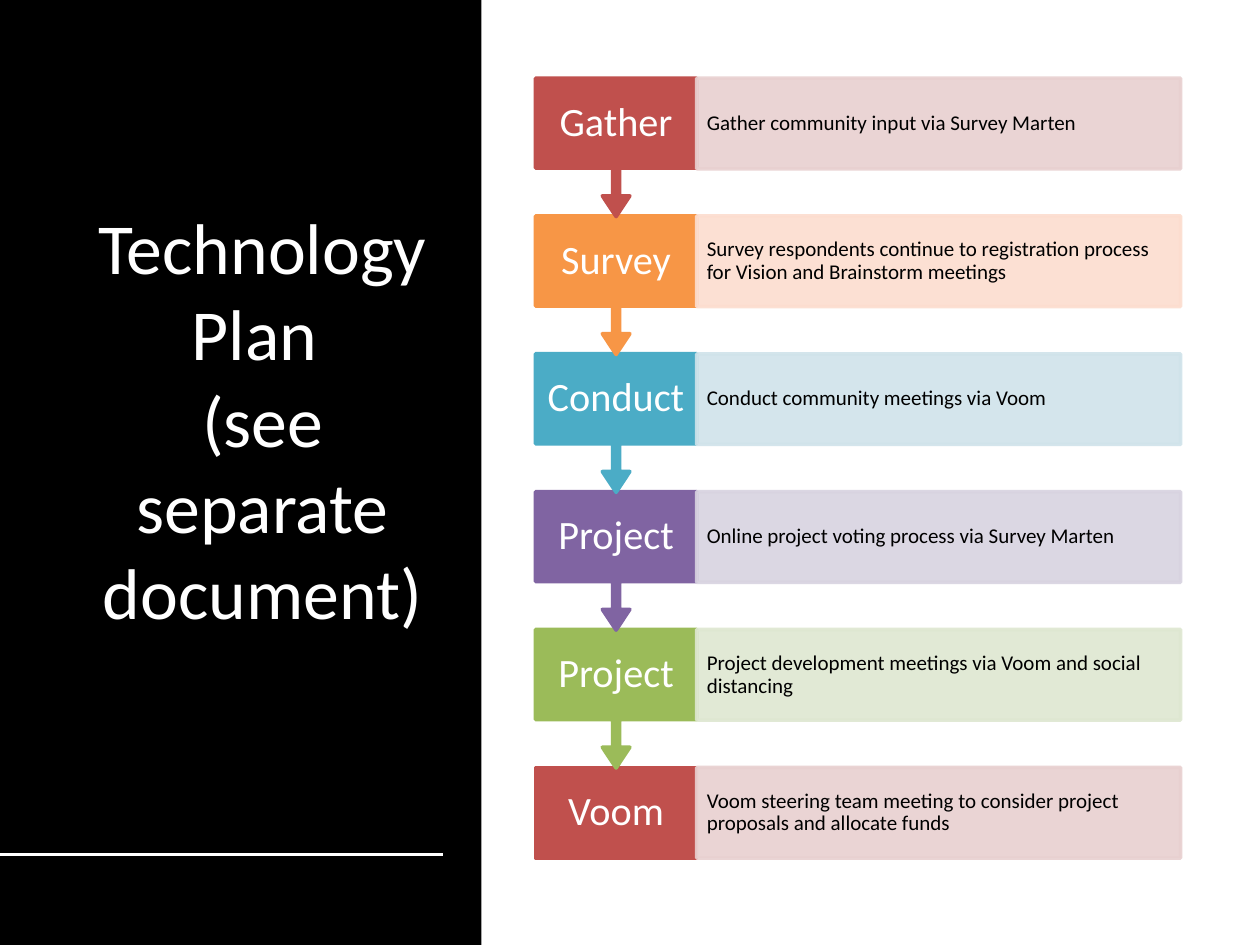
from lxml.etree import SubElement
from pptx import Presentation
from pptx.dml.color import RGBColor
from pptx.enum.shapes import MSO_CONNECTOR, MSO_SHAPE
from pptx.enum.text import MSO_ANCHOR, MSO_AUTO_SIZE, PP_ALIGN
from pptx.oxml.ns import qn
from pptx.util import Inches, Pt


def tint(fill, code, alpha=100):
    fill.solid()
    fill.fore_color.rgb = RGBColor.from_string(code)
    if alpha < 100:
        for node in fill._xPr.iter(qn("a:srgbClr")):
            if node.find(qn("a:alpha")) is None:
                SubElement(node, qn("a:alpha"), val=str(alpha * 1000))


def write(shape, text, size, code, align, side, edge):
    frame = shape.text_frame
    frame.text = text
    look = {
        "word_wrap": True,
        "auto_size": MSO_AUTO_SIZE.NONE,
        "vertical_anchor": MSO_ANCHOR.MIDDLE,
        "margin_left": Inches(side),
        "margin_right": Inches(side),
        "margin_top": Inches(edge),
        "margin_bottom": Inches(edge),
    }
    for key, value in look.items():
        setattr(frame, key, value)
    para = frame.paragraphs[0]
    para.alignment = align
    for key, value in {"name": "Calibri", "size": Pt(size), "bold": False}.items():
        setattr(para.font, key, value)
    tint(para.font.fill, code)
    return para


deck = Presentation()
deck.slide_width, deck.slide_height = Inches(10), Inches(7.5)
wide, high = deck.slide_width, deck.slide_height
slide = deck.slides.add_slide(deck.slide_layouts[5])

panel = slide.shapes.add_shape(MSO_SHAPE.RECTANGLE, 0, 0, Inches(3.82), high)
panel.shadow.inherit = False
tint(panel.fill, "000000")
panel.line.fill.background()
slide.shapes._spTree.insert(2, panel._element)

title = slide.shapes.title
place = {"left": 0.62, "top": 0.61, "width": 2.93, "height": 5.42}
for key, value in place.items():
    setattr(title, key, Inches(value))
write(title, "Technology Plan \v(see separate document)", 41, "FFFFFF",
      PP_ALIGN.CENTER, 0.1, 0.05)

level = Inches(6.78)
rule = slide.shapes.add_connector(MSO_CONNECTOR.STRAIGHT, 0, level, Inches(3.52), level)
rule.line.width = Pt(2)
tint(rule.line.fill, "FFFFFF")
SubElement(rule._element.spPr, qn("a:effectLst"))

steps = [
    ("Gather", "Gather community input via Survey Marten", "C0504D", "E8D0D0"),
    ("Survey", "Survey respondents continue to registration process "
     "for Vision and Brainstorm meetings", "F79646", "FCDDCF"),
    ("Conduct", "Conduct community meetings via Voom", "4BACC6", "D0E3EA"),
    ("Project", "Online project voting process via Survey Marten", "8064A2", "D8D3E0"),
    ("Project", "Project development meetings via Voom and social distancing",
     "9BBB59", "DEE7D1"),
    ("Voom", "Voom steering team meeting to consider project "
     "proposals and allocate funds", "C0504D", "E8D0D0"),
]
left, top, col = Inches(4.25), Inches(0.62), Inches(1.28)
last = len(steps) - 1
pitch = Inches(5.47) // last
tall, drop = Inches(0.72), Inches(1.1)
flow = slide.shapes.add_group_shape()

for row in range(last, -1, -1):
    name, note, dark, pale = steps[row]
    y = top + row * pitch
    if row == last:
        head = flow.shapes.add_shape(MSO_SHAPE.RECTANGLE, left, y, col, tall)
    else:
        head = flow.shapes.add_shape(MSO_SHAPE.DOWN_ARROW_CALLOUT, left, y, col, drop)
        for spot, value in enumerate((0.05, 0.1, 0.15, 0.65)):
            head.adjustments[spot] = value
    body = flow.shapes.add_shape(MSO_SHAPE.RECTANGLE, left + col, y, 3 * col, tall)
    for box, code, alpha in ((head, dark, 100), (body, pale, 90)):
        box.shadow.inherit = False
        box.line.width = Pt(2)
        tint(box.fill, code, alpha)
        tint(box.line.fill, code, alpha)
    write(head, name, 23, "FFFFFF", PP_ALIGN.CENTER, 0.09, 0.18).line_spacing = 0.9
    write(body, note, 12, "000000", PP_ALIGN.LEFT, 0.08, 0.17).line_spacing = 0.9

deck.save("out.pptx")
